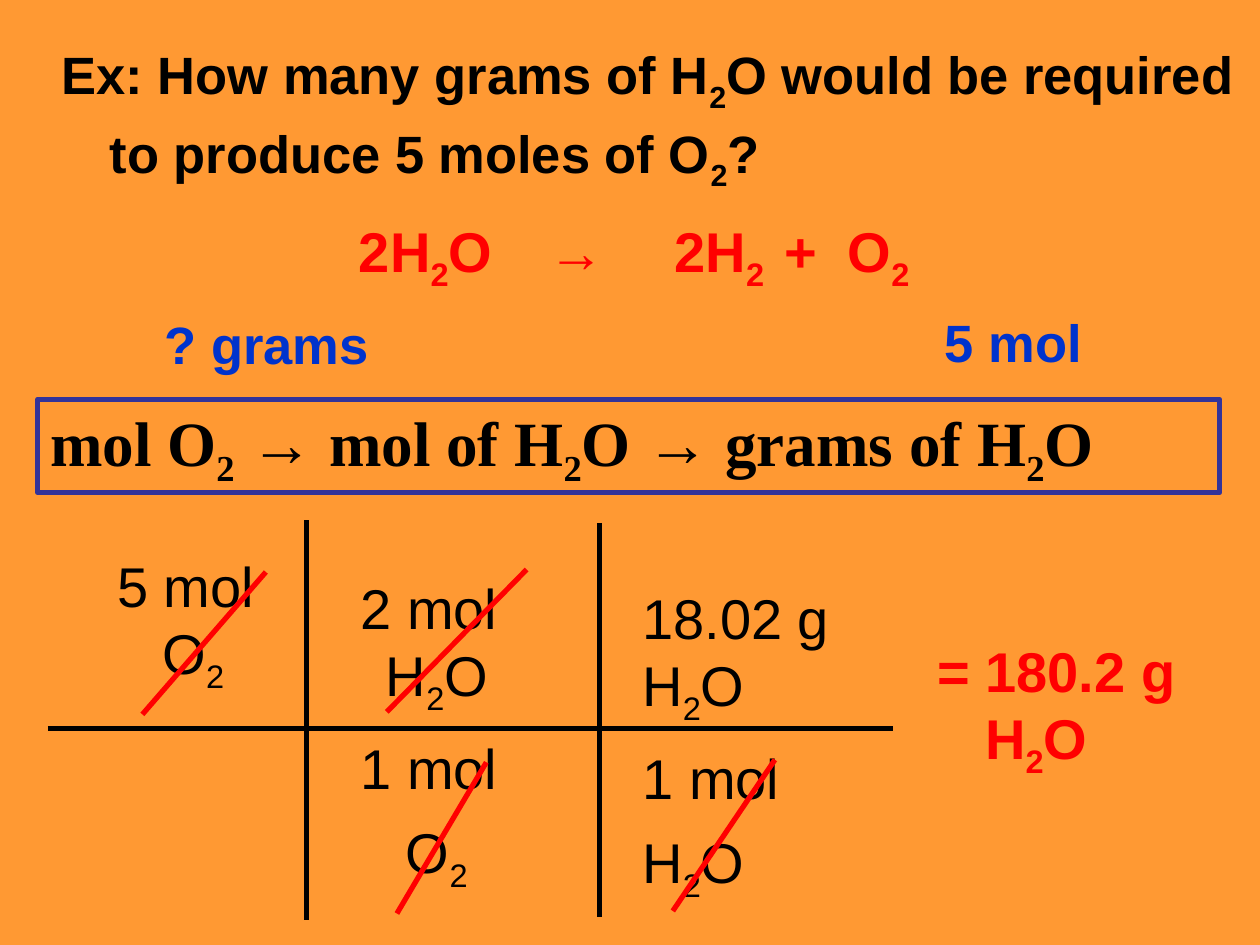
from lxml import etree
from pptx import Presentation
from pptx import util as u
from pptx.dml.color import RGBColor
from pptx.enum import shapes, text
from pptx.oxml.ns import qn

COLORS = {"background": "FF9933", "ink": "000000", "red": "FF0000",
          "blue": "0033CC", "frame": "333399"}
WIDTH, HEIGHT = 10, 7.5
HANGING = 0.38
LEFT, CENTER = text.PP_ALIGN.LEFT, text.PP_ALIGN.CENTER

# Content: "_2" marks a subscript two
QUESTION = ["Ex: How many grams of H_2O would be required to produce 5 moles of O_2?"]
PLAN = ["mol O_2 → mol of H_2O → grams of H_2O"]

# paragraphs, box (left, top, width, height), text style
LABELS = [
    (["2H_2O\t →\t 2H_2 \t+ \tO_2 "], (1.01, 1.61, 8.17, 0.9),
     dict(color="red", bold=True, align=CENTER, spacing=1.1)),
    (["? grams"], (1.21, 2.43, 2.46, 0.78), dict(size=30, color="blue", bold=True)),
    (["5 mol"], (7.4, 2.41, 1.52, 0.78), dict(size=30, color="blue", bold=True)),
    (["5 mol ", "O_2"], (0.67, 4.33, 1.73, 1.52), dict(align=CENTER)),
    (["2 mol", " H_2O", "1 mol", " O_2"], (2.58, 4.5, 1.65, 3), dict(align=CENTER)),
    (["18.02 g", "H_2O", "1 mol", "H_2O"], (5, 4.58, 2.22, 2.7), {}),
    (["= 180.2 g H_2O"], (7.34, 5, 2.46, 1.64), dict(color="red", bold=True)),
]

# Lines as (from x, from y, to x, to y)
GRID_LINES = [(0.38, 5.78, 7.09, 5.78), (2.43, 4.13, 2.43, 7.3), (4.76, 4.15, 4.76, 7.28)]
CANCEL_STROKES = [(2.11, 4.54, 1.13, 5.67), (3.86, 6.05, 3.15, 7.25),
                  (4.18, 4.52, 3.07, 5.65), (6.15, 6.03, 5.34, 7.23)]


def rgb(name):
    return RGBColor.from_string(COLORS[name])


def inches(values):
    return [u.Inches(value) for value in values]


def add_run(paragraph, words, size, color, bold, font, subscript=False):
    if not words:
        return
    run = paragraph.add_run()
    run.text = words
    run.font.size, run.font.bold, run.font.name = u.Pt(size), bold, font
    run.font.color.rgb = rgb(color)
    if subscript:
        run.font._element.set("baseline", "-25000")


def write(shape, paragraphs, size=32, color="ink", bold=False, font="Arial",
          align=LEFT, spacing=1.0, hanging=HANGING, anchor=text.MSO_ANCHOR.TOP):
    frame = shape.text_frame
    frame.word_wrap = True
    frame.auto_size = text.MSO_AUTO_SIZE.NONE
    frame.vertical_anchor = anchor
    for index, content in enumerate(paragraphs):
        paragraph = frame.add_paragraph() if index else frame.paragraphs[0]
        paragraph.alignment = align
        paragraph.line_spacing = spacing
        # The lower half of each fraction stands further apart
        paragraph.space_before = u.Pt(0.3 * size if index >= 2 else 0)
        properties = paragraph._p.get_or_add_pPr()
        properties.set("marL", str(u.Inches(hanging)))
        properties.set("indent", str(-u.Inches(hanging)))
        for position, piece in enumerate(content.split("_2")):
            if position:
                add_run(paragraph, "2", size, color, bold, font, subscript=True)
            add_run(paragraph, piece, size, color, bold, font)


def add_line(slide, ends, color):
    line = slide.shapes.add_connector(shapes.MSO_CONNECTOR.STRAIGHT, *inches(ends))
    line.line.color.rgb = rgb(color)
    line.line.width = u.Pt(3)
    etree.SubElement(line._element.spPr, qn("a:effectLst"))


def main():
    presentation = Presentation()
    presentation.slide_width, presentation.slide_height = inches((WIDTH, HEIGHT))
    slide = presentation.slides.add_slide(presentation.slide_layouts[5])
    slide.background.fill.solid()
    slide.background.fill.fore_color.rgb = rgb("background")

    # Question
    title = slide.shapes.title
    title.left, title.top, title.width, title.height = inches((0.39, 0.23, 9.61, 1.87))
    write(title, QUESTION, size=30, bold=True, spacing=1.1)

    # Framed conversion plan
    frame = slide.shapes.add_shape(shapes.MSO_SHAPE.RECTANGLE, *inches((0.3, 3.17, 9.38, 0.74)))
    frame.shadow.inherit = False
    frame.fill.background()
    frame.line.color.rgb = rgb("frame")
    frame.line.width = u.Pt(3)
    write(frame, PLAN, size=36, bold=True, font="Times New Roman", hanging=0,
          anchor=text.MSO_ANCHOR.MIDDLE)

    # Equation, quantities and result
    for paragraphs, box, style in LABELS:
        write(slide.shapes.add_textbox(*inches(box)), paragraphs, **style)

    # Conversion grid and cancelled units
    for color, lines in (("ink", GRID_LINES), ("red", CANCEL_STROKES)):
        for ends in lines:
            add_line(slide, ends, color)

    presentation.save("out.pptx")


if __name__ == "__main__":
    main()
